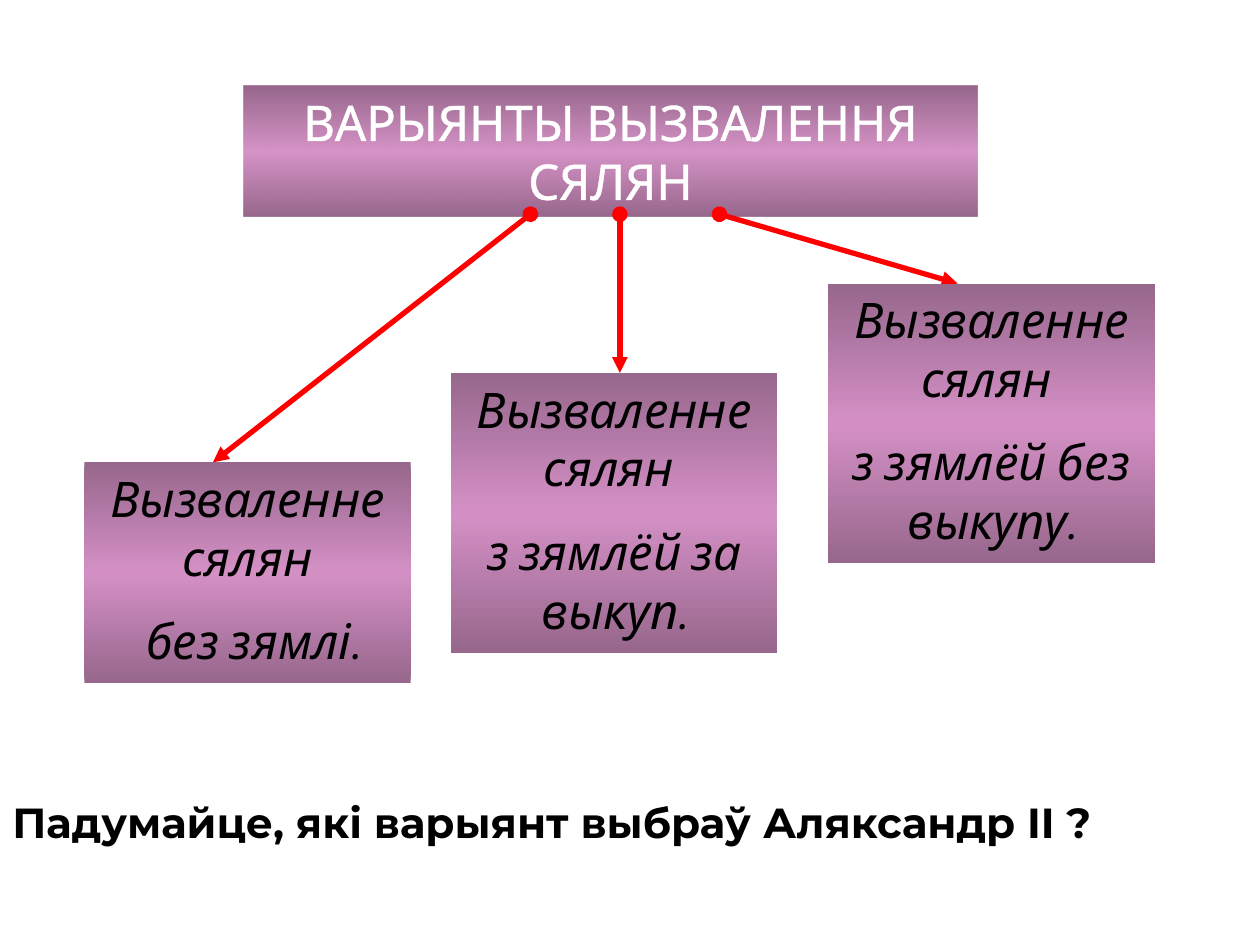
from lxml import etree
from pptx import Presentation
from pptx.dml.color import RGBColor
from pptx.enum import shapes, text
from pptx.oxml import ns
from pptx.util import Inches, Pt

PLUM, RED, WHITE, BLACK = "D490C5", "FF0000", "FFFFFF", "000000"


def color(value):
    return RGBColor.from_string(value)


def add_xml(parent, tag, **attributes):
    return etree.SubElement(parent, ns.qn(tag), attributes)


def fill_with_bands(shape, alpha=None):
    """Vertical gradient: dark edges around a light middle."""
    shape.shadow.inherit = False
    shape.line.fill.background()
    shape.fill.gradient()
    shape.fill.gradient_angle = 270
    stops = shape._element.spPr.find(".//" + ns.qn("a:gsLst"))
    for stop in list(stops):
        stops.remove(stop)
    for position, effect, value in (
        ("0", "a:shade", "46275"),
        ("50000", "a:alpha", alpha),
        ("100000", "a:shade", "46275"),
    ):
        stop = add_xml(stops, "a:gs", pos=position)
        tint = add_xml(stop, "a:srgbClr", val=PLUM)
        if value:
            add_xml(tint, effect, val=value)


def write_text(shape, lines, size=28, font="Karla", ink=BLACK, bold=False,
               italic=False, align=text.PP_ALIGN.CENTER, gap=14):
    frame = shape.text_frame
    frame.word_wrap = True
    frame.auto_size = text.MSO_AUTO_SIZE.SHAPE_TO_FIT_TEXT
    frame.vertical_anchor = text.MSO_ANCHOR.TOP
    for index, line in enumerate(lines):
        para = frame.add_paragraph() if index else frame.paragraphs[0]
        para.alignment = align
        para.space_before = Pt(gap if index else 0)
        span = para.add_run()
        span.text = line
        span.font.name, span.font.size = font, Pt(size)
        span.font.bold, span.font.italic = bold, italic
        span.font.color.rgb = color(ink)


def place_title(page, left, top, width, height):
    title = page.shapes.title
    title.left, title.top = Inches(left), Inches(top)
    title.width, title.height = Inches(width), Inches(height)
    fill_with_bands(title, alpha="96000")
    write_text(title, ["ВАРЫЯНТЫ ВЫЗВАЛЕННЯ СЯЛЯН"], ink=WHITE)
    # White outline around the letters
    properties = title.text_frame.paragraphs[0].runs[0].font._element
    outline = etree.Element(ns.qn("a:ln"), w=str(Pt(1.45)))
    add_xml(add_xml(outline, "a:solidFill"), "a:srgbClr", val=WHITE)
    properties.insert(0, outline)


def add_option(page, left, top, width, height, lines):
    box = page.shapes.add_shape(
        shapes.MSO_SHAPE.RECTANGLE,
        Inches(left), Inches(top), Inches(width), Inches(height))
    fill_with_bands(box)
    write_text(box, lines, italic=True)


def add_arrow(page, start_x, start_y, end_x, end_y):
    arrow = page.shapes.add_connector(
        shapes.MSO_CONNECTOR.STRAIGHT,
        Inches(start_x), Inches(start_y), Inches(end_x), Inches(end_y))
    arrow.line.color.rgb = color(RED)
    arrow.line.width = Pt(3)
    line = arrow.line._get_or_add_ln()
    add_xml(line, "a:headEnd", type="oval")
    add_xml(line, "a:tailEnd", type="triangle")
    add_xml(arrow._element.spPr, "a:effectLst")


def add_question(page, left, top, width, height):
    box = page.shapes.add_textbox(
        Inches(left), Inches(top), Inches(width), Inches(height))
    write_text(box, ["Падумайце, які варыянт выбраў Аляксандр II ?"], size=24,
               font="Montserrat", bold=True, align=text.PP_ALIGN.LEFT)


def main():
    deck = Presentation()
    deck.slide_width, deck.slide_height = Inches(10), Inches(7.5)
    page = deck.slides.add_slide(deck.slide_layouts[5])

    place_title(page, 1.93, 0.68, 5.83, 1.04)

    # Options: box, arrow start and end, wording
    options = [
        (0.67, 3.67, 2.59, 1.75, 4.21, 1.69,
         ["Вызваленне сялян", " без зямлі."]),
        (3.58, 2.96, 2.59, 2.22, 4.92, 4.92,
         ["Вызваленне сялян ", "з зямлёй за выкуп."]),
        (6.57, 2.25, 2.6, 2.22, 5.71, 7.6,
         ["Вызваленне сялян ", "з зямлёй без выкупу."]),
    ]
    for left, top, width, height, start_x, end_x, lines in options:
        add_arrow(page, start_x, 1.7, end_x, top)
        add_option(page, left, top, width, height, lines)

    # Closing question
    add_question(page, 0, 6.27, 10.46, 0.5)
    deck.save("out.pptx")


if __name__ == "__main__":
    main()
